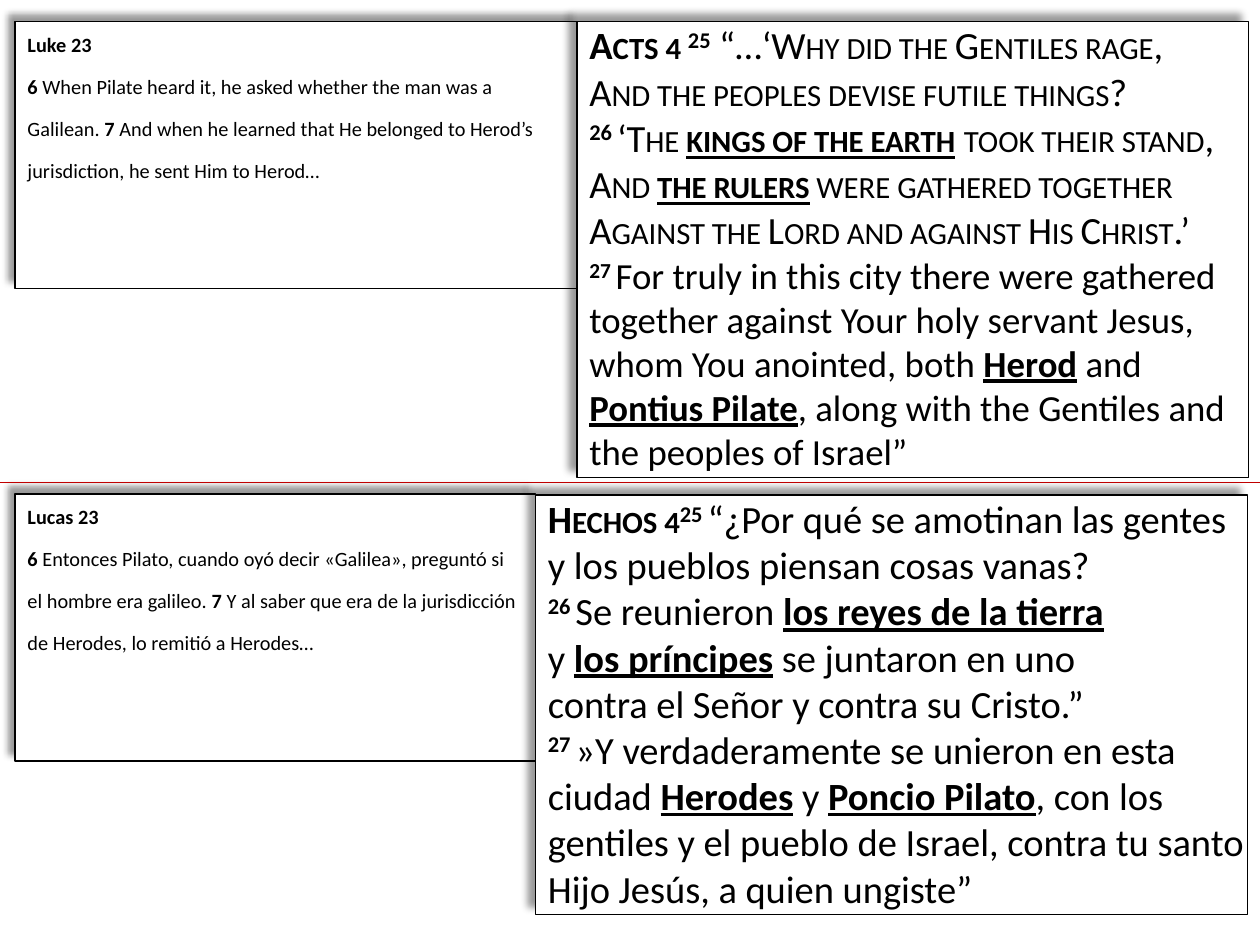
from lxml import etree
from pptx import Presentation, util as u
from pptx.dml import color
from pptx.enum import shapes, text
from pptx.oxml import ns

Pt = u.Pt


def rgb(code):
    return color.RGBColor.from_string(code)


def panel(left, top, width, height, pads, paras):
    """White framed box; each paragraph is (size, [(words, marks), ...]).
    Marks: b bold, u underline, s small caps, ^ superscript."""
    box = page.shapes.add_shape(shapes.MSO_SHAPE.RECTANGLE,
                                Pt(left), Pt(top), Pt(width), Pt(height))
    box.fill.solid()
    box.fill.fore_color.rgb = rgb("FFFFFF")
    box.line.color.rgb = rgb("000000")
    box.line.width = Pt(0.75)

    # Soft shadow to the upper left
    box.shadow.inherit = False
    glow = box._element.spPr.find(ns.qn("a:effectLst"))
    cast = etree.SubElement(glow, ns.qn("a:outerShdw"), blurRad=str(Pt(4)),
                            dist=str(Pt(6)), dir=str(225 * 60000),
                            algn="br", rotWithShape="0")
    tint = etree.SubElement(cast, ns.qn("a:srgbClr"), val="000000")
    etree.SubElement(tint, ns.qn("a:alpha"), val="40000")

    frame = box.text_frame
    frame.word_wrap = True
    frame.vertical_anchor = text.MSO_ANCHOR.TOP
    frame.margin_left, frame.margin_top, frame.margin_right, frame.margin_bottom = map(Pt, pads)
    for i, (size, parts) in enumerate(paras):
        para = frame.paragraphs[0] if i == 0 else frame.add_paragraph()
        para.alignment = text.PP_ALIGN.LEFT
        for words, marks in parts:
            for n, line in enumerate(words.split("\n")):
                if n:
                    para.add_line_break()
                if not line:
                    continue
                run = para.add_run()
                run.text = line
                font = run.font
                font.name, font.size = "Calibri", Pt(size)
                font.color.rgb = rgb("000000")
                font.bold = "b" in marks
                font.underline = "u" in marks
                props = run._r.get_or_add_rPr()
                if "s" in marks:
                    props.set("cap", "small")
                if "^" in marks:
                    props.set("baseline", "30000")


deck = Presentation()
deck.slide_width, deck.slide_height = Pt(720), Pt(540)
page = deck.slides.add_slide(deck.slide_layouts[6])

even = (7.2, 3.6, 7.2, 3.6)

# Spanish, left: Luke
panel(8.64, 282.24, 297.36, 152.64, even, [
    (20, [("Lucas 23", "b^")]),
    (20, [("6 ", "b^"),
          ("Entonces Pilato, cuando oyó decir «Galilea», preguntó si el hombre era galileo. ", "^"),
          ("7 ", "b^"),
          ("Y al saber que era de la jurisdicción de Herodes, lo remitió a Herodes…", "^")]),
])

# English, left: Luke
panel(8.64, 12.24, 321.12, 152.64, even, [
    (20, [("Luke 23", "b^")]),
    (20, [("6 ", "b^"),
          ("When Pilate heard it, he asked whether the man was a Galilean. ", "^"),
          ("7 ", "b^"),
          ("And when he learned that He belonged to Herod’s jurisdiction, he sent Him to Herod…", "^")]),
])

# English, right: Acts
panel(329.76, 12.24, 383.76, 260.64, (7.2, 0, 7.2, 0), [
    (22, [("Acts 4 ", "bs"), ("25", "b^"), (" “…‘", ""),
          ("Why did the Gentiles rage", "s"), (",\n", ""),
          ("And the peoples devise futile things", "s"), ("?\n", ""),
          ("26 ", "b^"), ("‘", ""), ("The ", "s"),
          ("kings of the earth", "bus"), (" ", ""),
          ("took their stand", "s"), (",\n", ""),
          ("And ", "s"), ("the rulers", "bus"),
          (" were gathered together\nAgainst the Lord and against His Christ", "s"),
          (".’", "")]),
    (21, [("27 ", "b^"),
          ("For truly in this city there were gathered together against Your holy "
           "servant Jesus, whom You anointed, both ", ""),
          ("Herod", "bu"), (" and ", ""), ("Pontius Pilate", "bu"),
          (", along with the Gentiles and the peoples of Israel”", "")]),
])

# Spanish, right: Acts
panel(306, 282.96, 406.8, 239.76, (7.2, 0, 0, 0), [
    (22, [("Hechos 4", "bs"), ("25 ", "b^"),
          ("“¿Por qué se amotinan las gentes\ny los pueblos piensan cosas vanas?\n", ""),
          ("26 ", "b^"), ("Se reunieron ", ""),
          ("los reyes de la tierra\n", "bu"), ("y ", ""), ("los príncipes", "bu"),
          (" se juntaron en uno\ncontra el Señor y contra su Cristo.”", "")]),
    (22, [("27 ", "b^"), ("»Y verdaderamente se unieron en esta ciudad ", ""),
          ("Herodes", "bu"), (" y ", ""), ("Poncio Pilato", "bu"),
          (", con los gentiles y el pueblo de Israel, contra tu santo Hijo Jesús, "
           "a quien ungiste”", "")]),
])

# Red rule between the languages
rule = page.shapes.add_connector(shapes.MSO_CONNECTOR.STRAIGHT,
                                 Pt(0), Pt(275.76), Pt(720), Pt(275.76))
rule.line.color.rgb = rgb("C00000")
rule.line.width = Pt(0.75)
etree.SubElement(rule._element.spPr, ns.qn("a:effectLst"))

deck.save("out.pptx")
